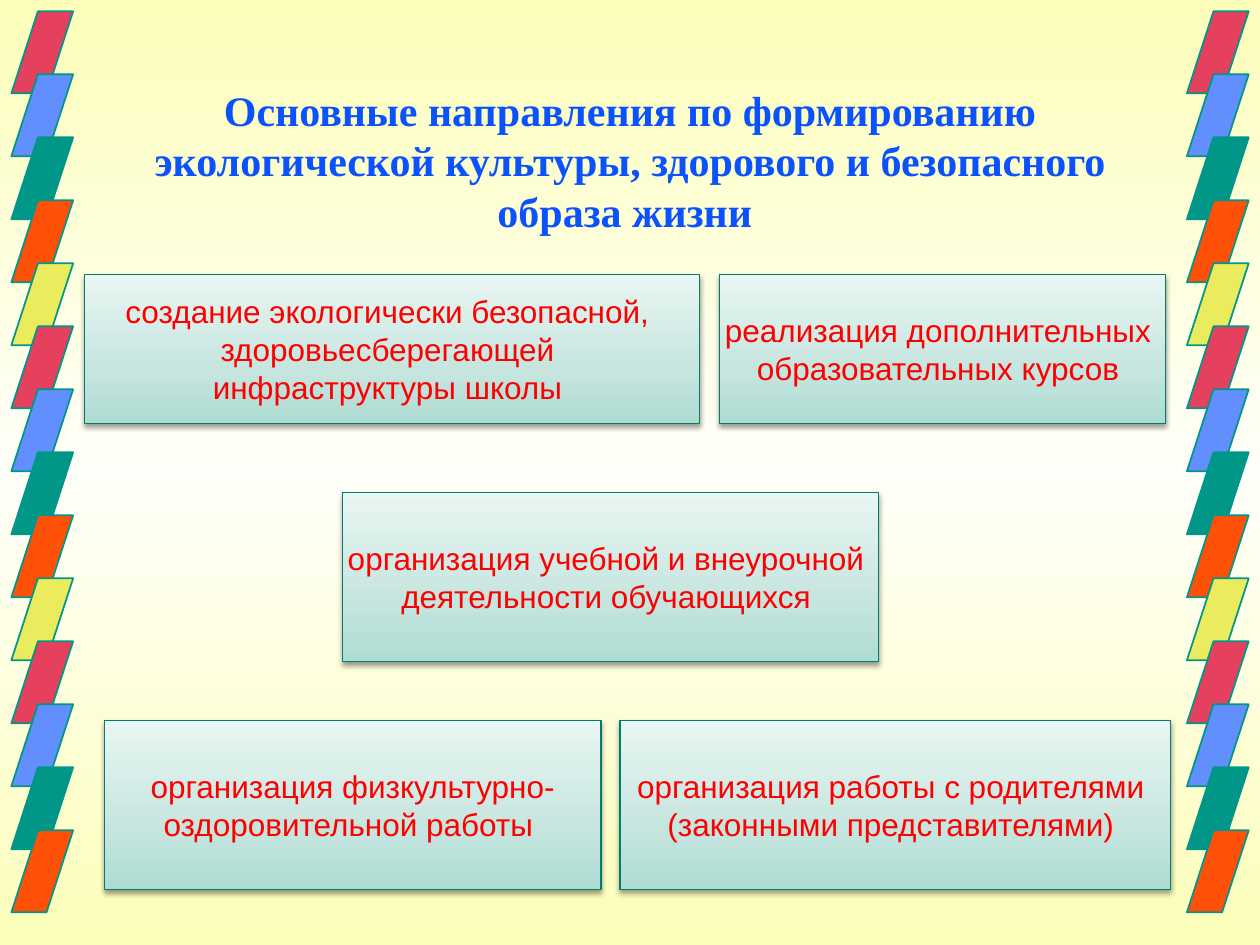
from copy import deepcopy
from itertools import cycle, islice

from pptx import Presentation
from pptx.dml.color import RGBColor
from pptx.enum.shapes import MSO_SHAPE as SHAPE
from pptx.enum.text import MSO_ANCHOR as ANCHOR, MSO_AUTO_SIZE as AUTO_SIZE, PP_ALIGN as ALIGN
from pptx.oxml import parse_xml
from pptx.oxml.ns import nsdecls, qn
from pptx.util import Inches, Pt

COLORS = {
    "edge": "FCFEB9", "center": "FFFFF9",
    "red": "E5405D", "blue": "618FFD", "teal": "009688",
    "orange": "FF5008", "yellow": "EAEC5E",
    "title": "0B52FC", "text": "FF0000", "outline": "007C70",
    "box_dark": "ADDCD3", "box_mid": "C6E5DF", "box_light": "E9F6F3",
}
RIBBON = ["red", "blue", "teal", "orange", "yellow"]
BOXES = [
    (0.67, 2.18, 4.88, 1.18,
     "создание экологически безопасной, \nздоровьесберегающей \nинфраструктуры школы "),
    (2.72, 3.91, 4.25, 1.34,
     "организация учебной и внеурочной \nдеятельности обучающихся "),
    (0.83, 5.72, 3.94, 1.34,
     "организация физкультурно-\nоздоровительной работы "),
    (5.71, 2.18, 3.54, 1.18,
     "реализация дополнительных \nобразовательных курсов "),
    (4.92, 5.72, 4.37, 1.34,
     "организация работы с родителями \n(законными представителями) "),
]


def rgb(name):
    return RGBColor.from_string(COLORS[name])


def set_gradient(owner, fill, stops):
    fill.gradient()
    fill.gradient_angle = 90
    gs_list = owner._element.find(".//" + qn("a:gsLst"))
    gs_list.append(deepcopy(gs_list[0]))
    for stop, (position, color) in zip(fill.gradient_stops, stops):
        stop.position = position
        stop.color.rgb = rgb(color)


def add_shadow(sp):
    sp.shadow.inherit = False
    effects = sp._element.spPr.find(qn("a:effectLst"))
    effects.append(parse_xml(
        f'<a:outerShdw {nsdecls("a")} blurRad="{Pt(3.1)}" dist="{Pt(1.6)}" '
        'dir="5400000" rotWithShape="0"><a:srgbClr val="000000">'
        '<a:alpha val="38000"/></a:srgbClr></a:outerShdw>'))


def format_text(tf, font, size, color, bold=False):
    for p in tf.paragraphs:
        p.alignment = ALIGN.CENTER
        p.font.name = font
        p.font.size = Pt(size)
        p.font.bold = bold
        p.font.color.rgb = rgb(color)


def add_title(s, text):
    title = s.shapes.title
    title.left, title.top = Inches(0.75), Inches(0.67)
    title.width, title.height = Inches(8.5), Inches(1.25)
    tf = title.text_frame
    tf.text = text
    tf.auto_size = AUTO_SIZE.NONE
    tf.vertical_anchor = ANCHOR.BOTTOM
    format_text(tf, "Times New Roman", 24, "title", bold=True)


def add_ribbon(s, x):
    for i, color in enumerate(islice(cycle(RIBBON), 14)):
        sp = s.shapes.add_shape(SHAPE.PARALLELOGRAM, Inches(x), Inches(0.09 + 0.5 * i),
                                Inches(0.49), Inches(0.65))
        sp.adjustments[0] = 0.43
        sp.shadow.inherit = False
        sp.fill.solid()
        sp.fill.fore_color.rgb = rgb(color)
        sp.line.color.rgb = rgb("teal")
        sp.line.width = Pt(1)


def add_box(s, x, y, w, h, text):
    sp = s.shapes.add_shape(SHAPE.RECTANGLE, Inches(x), Inches(y), Inches(w), Inches(h))
    set_gradient(sp, sp.fill, [(0, "box_dark"), (0.35, "box_mid"), (1, "box_light")])
    sp.line.color.rgb = rgb("outline")
    sp.line.width = Pt(0.75)
    add_shadow(sp)
    tf = sp.text_frame
    tf.word_wrap = False
    tf.vertical_anchor = ANCHOR.MIDDLE
    tf.text = text
    format_text(tf, "Arial", 18, "text")


def main():
    prs = Presentation()
    prs.slide_width, prs.slide_height = Inches(10), Inches(7.5)
    s = prs.slides.add_slide(prs.slide_layouts[5])
    set_gradient(s, s.background.fill, [(0, "edge"), (0.5, "center"), (1, "edge")])
    for x in (0.09, 9.42):
        add_ribbon(s, x)
    add_title(s, "Основные направления по формированию экологической культуры, "
                 "здорового и безопасного образа жизни ")
    for box in BOXES:
        add_box(s, *box)
    prs.save("out.pptx")


if __name__ == "__main__":
    main()
